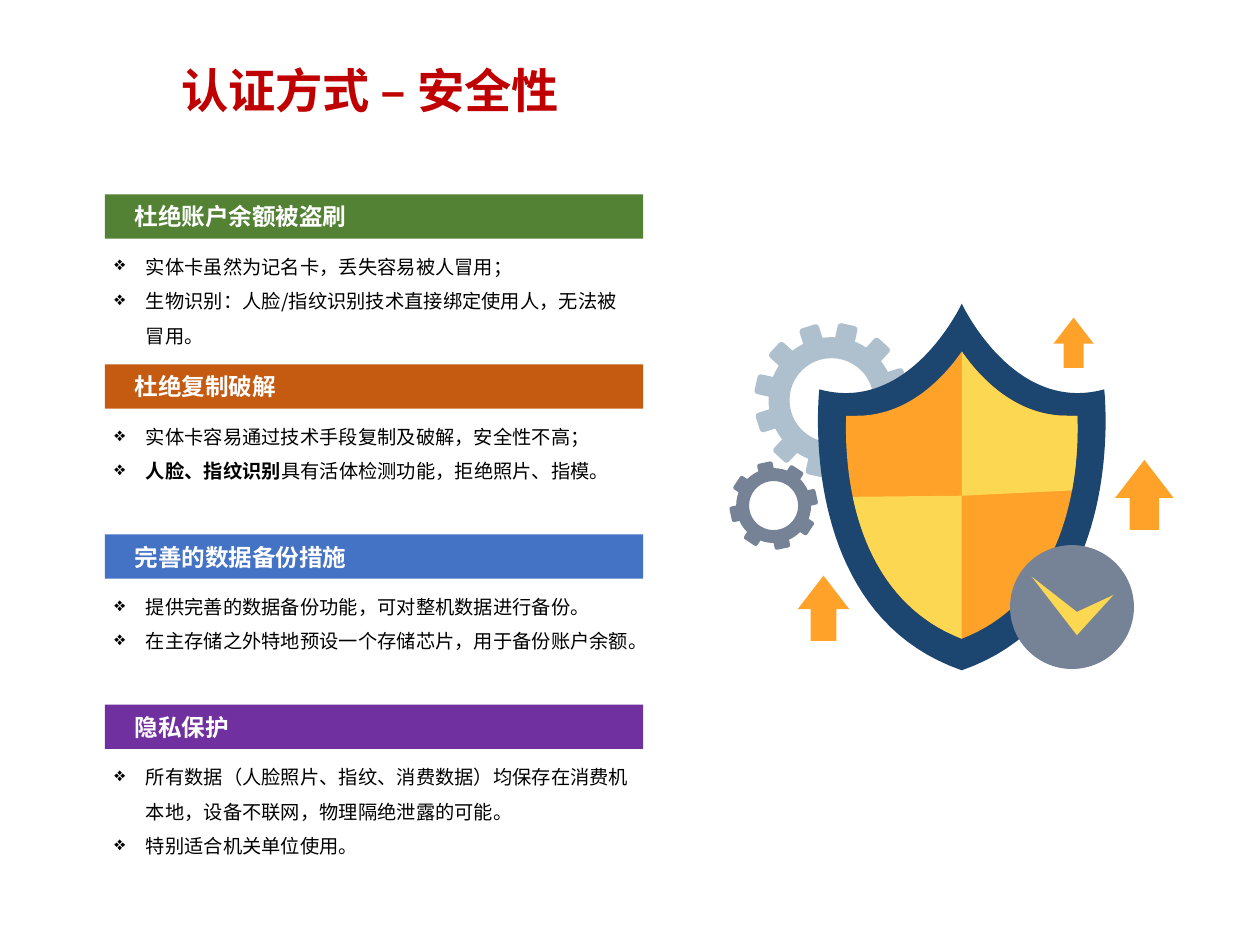
import math
from dataclasses import dataclass

import pptx
import pptx.dml.color
import pptx.enum.shapes
import pptx.enum.text
import pptx.oxml
import pptx.oxml.ns
import pptx.util
from lxml import etree

Pt = pptx.util.Pt
SHAPE = pptx.enum.shapes.MSO_SHAPE
ANCHOR = pptx.enum.text.MSO_ANCHOR
qn = pptx.oxml.ns.qn

FONT = "Noto Sans CJK SC"
COLORS = {
    "title": "C00000", "text": "000000", "white": "FFFFFF",
    "green": "548235", "brown": "C55A11", "blue": "4472C4", "purple": "7030A0",
    "light_gear": "AEBFCE", "slate": "768296", "navy": "1C4670",
    "orange": "FFA229", "yellow": "FCD751",
}
SECTION_LEFT, SECTION_TOP, SECTION_WIDTH, SECTION_STEP = 60, 111, 307.5, 97.2
HEADER_HEIGHT, BODY_HEIGHT = 25.3, 68
SHIELD_CENTER, SHIELD_SPLIT = 549.6, 283.3

Point = tuple[float, float]


@dataclass(frozen=True)
class Section:
    heading: str
    color: str
    bullets: list[tuple[str, str]]  # bold lead, plain text


@dataclass(frozen=True)
class Gear:
    x: float
    y: float
    radius: float
    hole: float
    teeth: int
    first_angle: float
    tooth_radius: float
    tooth_width: float
    tooth_height: float
    color: str


@dataclass(frozen=True)
class Arrow:
    left: float
    top: float
    width: float
    height: float


SECTIONS = [
    Section("杜绝账户余额被盗刷", "green", [
        ("", "实体卡虽然为记名卡，丢失容易被人冒用；"),
        ("", "生物识别：人脸/指纹识别技术直接绑定使用人，无法被冒用。")]),
    Section("杜绝复制破解", "brown", [
        ("", "实体卡容易通过技术手段复制及破解，安全性不高；"),
        ("人脸、指纹识别", "具有活体检测功能，拒绝照片、指模。")]),
    Section("完善的数据备份措施", "blue", [
        ("", "提供完善的数据备份功能，可对整机数据进行备份。"),
        ("", "在主存储之外特地预设一个存储芯片，用于备份账户余额。")]),
    Section("隐私保护", "purple", [
        ("", "所有数据（人脸照片、指纹、消费数据）均保存在消费机本地，设备不联网，物理隔绝泄露的可能。"),
        ("", "特别适合机关单位使用。")]),
]
GEARS = [
    Gear(475.2, 228.7, 36, 24, 12, 12.5, 38.2, 11.5, 12, "light_gear"),
    Gear(442.1, 288.9, 21.4, 14, 8, 33, 21.2, 9, 7.8, "slate"),
]
ARROWS = [
    Arrow(637.2, 262.8, 33.5, 40),
    Arrow(602, 181.5, 23, 28.8),
    Arrow(455.8, 329, 29.5, 37.2),
]
# Right halves, from the tip to the foot: x is measured from the shield's axis.
OUTER_CURVES = [
    [(0, 173.5), (0, 173.5), (29.5, 236.9), (81.4, 222.5)],
    [(81.4, 222.5), (81.4, 222.5), (96, 349.9), (0, 383)],
]
INNER_CURVES = [
    [(0, 200.9), (10.5, 216), (30.7, 237.6), (60, 237.6)],
    [(60, 237.6), (62, 237.6), (64, 237.6), (66, 237.6)],
    [(66, 237.6), (67.2, 266), (63, 340.5), (0, 365)],
]


def style_shape(shape, color: str) -> None:
    shape.shadow.inherit = False
    shape.fill.solid()
    shape.fill.fore_color.rgb = pptx.dml.color.RGBColor.from_string(COLORS[color])
    shape.line.fill.background()


def add_preset(slide, kind, left: float, top: float, width: float, height: float, color: str):
    shape = slide.shapes.add_shape(kind, Pt(left), Pt(top), Pt(width), Pt(height))
    style_shape(shape, color)
    return shape


def add_polygon(slide, points: list[Point], color: str) -> None:
    corners = [(Pt(x), Pt(y)) for x, y in points]
    builder = slide.shapes.build_freeform(*corners[0])
    builder.add_line_segments(corners[1:], close=True)
    style_shape(builder.convert_to_shape(), color)


def set_frame(frame, left: float, vertical: float, anchor) -> None:
    frame.word_wrap = True
    frame.vertical_anchor = anchor
    frame.margin_left, frame.margin_right = Pt(left), Pt(5.4)
    frame.margin_top = frame.margin_bottom = Pt(vertical)


def set_font(paragraph, size: float, color: str, bold: bool = False):
    """Set the paragraph's font for Latin and East Asian text; return its XML element."""
    paragraph.alignment = pptx.enum.text.PP_ALIGN.LEFT
    font = paragraph.font
    font.size, font.bold, font.name = Pt(size), bold, FONT
    font.color.rgb = pptx.dml.color.RGBColor.from_string(COLORS[color])
    properties = paragraph._p.get_or_add_pPr().find(qn("a:defRPr"))
    etree.SubElement(properties, qn("a:ea")).set("typeface", FONT)
    return properties


def add_bullet(paragraph, lead: str, text: str) -> None:
    if lead:
        paragraph.add_run().text = lead
        paragraph.runs[0].font.bold = True
    paragraph.add_run().text = text
    paragraph.line_spacing = 1.5
    font_properties = set_font(paragraph, 11, "text")
    properties = paragraph._p.get_or_add_pPr()
    properties.set("marL", str(Pt(18)))
    properties.set("indent", str(-Pt(18)))
    bullet = etree.Element(qn("a:buChar"))
    bullet.set("char", "❖")
    font_properties.addprevious(bullet)


def add_title(slide) -> None:
    frame = slide.shapes.add_textbox(Pt(96.5), Pt(33), Pt(260), Pt(40.5)).text_frame
    set_frame(frame, 7.2, 3.6, ANCHOR.MIDDLE)
    paragraph = frame.paragraphs[0]
    paragraph.text = "认证方式 – 安全性"
    paragraph.line_spacing = 0.9
    set_font(paragraph, 27, "title", bold=True)


def add_section(slide, section: Section, top: float) -> None:
    header = add_preset(slide, SHAPE.RECTANGLE, SECTION_LEFT, top, SECTION_WIDTH,
                        HEADER_HEIGHT, section.color)
    set_frame(header.text_frame, 17, 2.7, ANCHOR.MIDDLE)
    header.text_frame.text = section.heading
    set_font(header.text_frame.paragraphs[0], 13.5, "white", bold=True)

    body = slide.shapes.add_textbox(Pt(SECTION_LEFT), Pt(top + HEADER_HEIGHT),
                                    Pt(SECTION_WIDTH), Pt(BODY_HEIGHT)).text_frame
    set_frame(body, 5.4, 2.7, ANCHOR.TOP)
    for index, (lead, text) in enumerate(section.bullets):
        add_bullet(body.add_paragraph() if index else body.paragraphs[0], lead, text)


def add_gear(slide, gear: Gear) -> None:
    for index in range(gear.teeth):
        angle = gear.first_angle + index * 360 / gear.teeth
        x = gear.x + gear.tooth_radius * math.sin(math.radians(angle))
        y = gear.y - gear.tooth_radius * math.cos(math.radians(angle))
        tooth = add_preset(slide, SHAPE.ROUNDED_RECTANGLE, x - gear.tooth_width / 2,
                           y - gear.tooth_height / 2, gear.tooth_width,
                           gear.tooth_height, gear.color)
        tooth.rotation = angle
    ring = add_preset(slide, SHAPE.DONUT, gear.x - gear.radius, gear.y - gear.radius,
                      2 * gear.radius, 2 * gear.radius, gear.color)
    ring.adjustments[0] = (gear.radius - gear.hole) / (2 * gear.radius)


def trace(curves: list[list[Point]], steps: int = 40) -> list[Point]:
    """Sample a chain of cubic Bézier curves."""
    points = [curves[0][0]]
    for curve in curves:
        for step in range(1, steps + 1):
            t = step / steps
            weights = [(1 - t) ** 3, 3 * t * (1 - t) ** 2, 3 * t * t * (1 - t), t ** 3]
            points.append(tuple(sum(w * p[axis] for w, p in zip(weights, curve))
                                for axis in (0, 1)))
    return points


def place(points: list[Point], side: int = 1) -> list[Point]:
    return [(SHIELD_CENTER + side * x, y) for x, y in points]


def add_shield(slide) -> None:
    outer, inner = trace(OUTER_CURVES), trace(INNER_CURVES)
    for half, color in ((outer, "navy"), (inner, "orange")):
        add_polygon(slide, place(half) + place(half[-2:0:-1], -1), color)
    center = (0, SHIELD_SPLIT)
    lower = [point for point in inner if point[1] >= SHIELD_SPLIT]
    upper = [point for point in inner if point[1] <= SHIELD_SPLIT]
    add_polygon(slide, place([center] + lower, -1), "yellow")
    add_polygon(slide, place([center] + upper), "yellow")


def add_check_badge(slide) -> None:
    add_preset(slide, SHAPE.OVAL, 577.2, 311.5, 70.8, 70.8, "slate")
    add_polygon(slide, [(589.5, 329.5), (615.4, 363), (636.3, 340), (615.4, 349.7)], "yellow")


def add_arrow(slide, arrow: Arrow) -> None:
    shape = add_preset(slide, SHAPE.UP_ARROW, arrow.left, arrow.top, arrow.width,
                       arrow.height, "orange")
    shape.adjustments[0], shape.adjustments[1] = 0.5, 0.65


def main() -> None:
    presentation = pptx.Presentation()
    presentation.slide_width, presentation.slide_height = Pt(720), Pt(540)
    slide = presentation.slides.add_slide(presentation.slide_layouts[6])
    add_title(slide)
    for index, section in enumerate(SECTIONS):
        add_section(slide, section, SECTION_TOP + index * SECTION_STEP)
    for gear in GEARS:
        add_gear(slide, gear)
    add_shield(slide)
    add_check_badge(slide)
    for arrow in ARROWS:
        add_arrow(slide, arrow)
    presentation.save("out.pptx")


if __name__ == "__main__":
    main()
